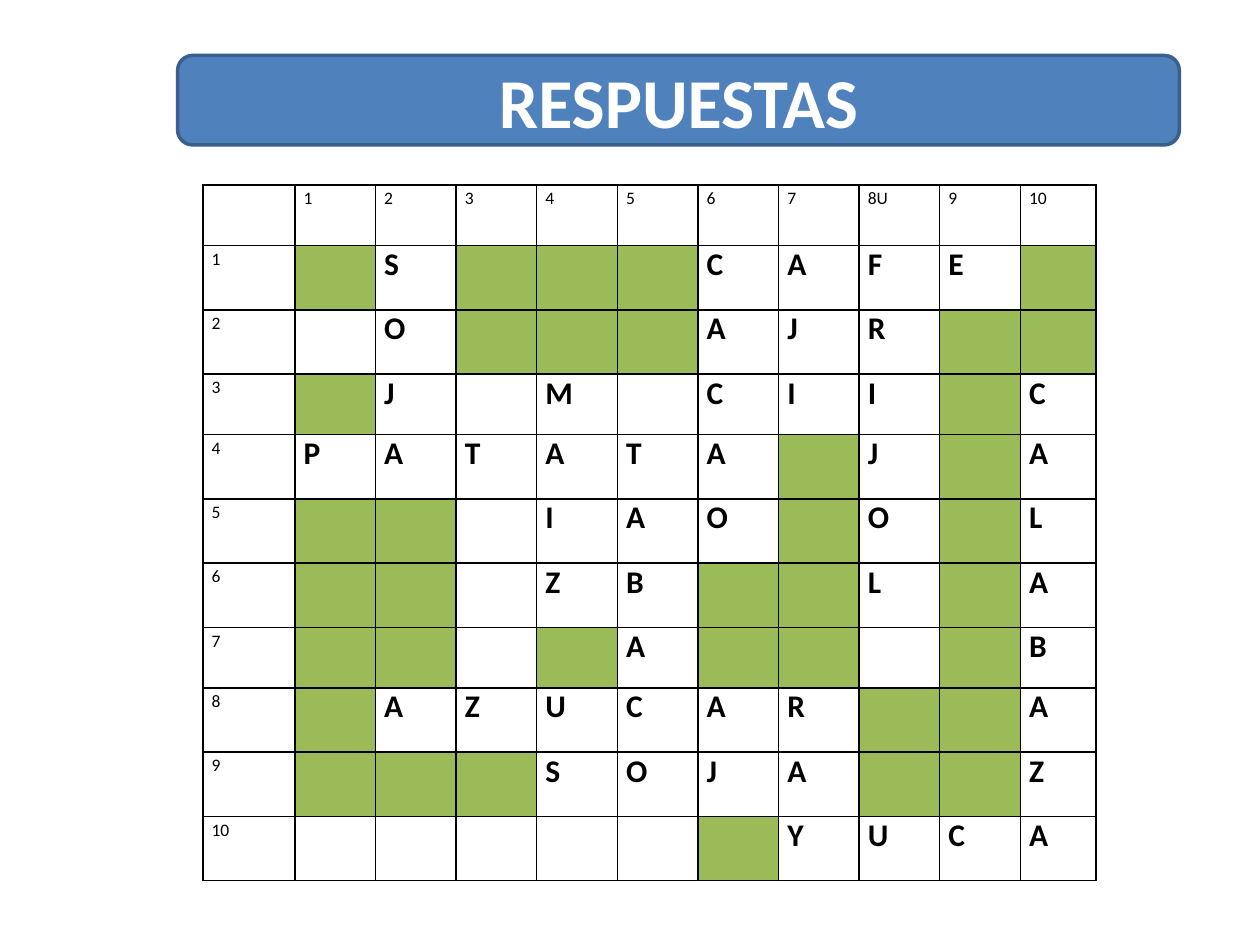
from lxml import etree
from pptx import Presentation
from pptx import util as u
from pptx.dml.color import RGBColor
from pptx.enum import shapes, text
from pptx.oxml import ns

GRID = [
    "#S###CAFE#",
    ".O###AJR##",
    "#J.M.CII#C",
    "PATATA#J#A",
    "##.IAO#O#L",
    "##.ZB##L#A",
    "##.#A##.#B",
    "#AZUCAR##A",
    "###SOJA##Z",
    ".....#YUCA",
]
COLUMN_LABELS = ["", "1", "2", "3", "4", "5", "6", "7", "8U", "9", "10"]
COLUMN_WIDTHS = [0.73] + [0.64] * 9 + [0.6]
SHORT_ROWS = (0, 3, 7)


def color(value):
    return RGBColor.from_string(value)


def write(frame, content, size=18, ink="000000", bold=False, align=None, spacing=None):
    paragraph = frame.paragraphs[0]
    paragraph.alignment = align
    paragraph.line_spacing = spacing
    run = paragraph.add_run()
    run.text = content
    run.font.name = "Calibri"
    run.font.size = u.Pt(size)
    run.font.bold = bold
    run.font.color.rgb = color(ink)


class CrosswordSlide:
    """Draws the banner and the answer grid on one slide in a shared style."""

    green, white, black = "9BBB59", "FFFFFF", "000000"
    blue, dark_blue = "4F81BD", "3A5F8C"

    def __init__(self, slide):
        self.slide = slide

    def banner(self, content, left, top, width, height):
        shape = self.slide.shapes.add_shape(
            shapes.MSO_SHAPE.ROUNDED_RECTANGLE,
            u.Inches(left), u.Inches(top), u.Inches(width), u.Inches(height))
        shape.shadow.inherit = False
        shape.fill.solid()
        shape.fill.fore_color.rgb = color(self.blue)
        shape.line.color.rgb = color(self.dark_blue)
        shape.line.width = u.Pt(2)
        shape.text_frame.vertical_anchor = text.MSO_ANCHOR.MIDDLE
        write(shape.text_frame, content, size=40, ink=self.white, bold=True,
              align=text.PP_ALIGN.CENTER)

    def crossword(self, left, top):
        heights = [0.48 if row in SHORT_ROWS else 0.51 for row in range(len(GRID) + 1)]
        table = self.slide.shapes.add_table(
            len(heights), len(COLUMN_WIDTHS), u.Inches(left), u.Inches(top),
            u.Inches(sum(COLUMN_WIDTHS)), u.Inches(sum(heights))).table
        table.first_row = table.horz_banding = False
        for column, width in zip(table.columns, COLUMN_WIDTHS):
            column.width = u.Inches(width)
        for row, height in zip(table.rows, heights):
            row.height = u.Inches(height)
        for index, label in enumerate(COLUMN_LABELS):
            self.label(table.cell(0, index), label)
        for row, letters in enumerate(GRID, start=1):
            self.label(table.cell(row, 0), str(row))
            for column, letter in enumerate(letters, start=1):
                self.square(table.cell(row, column), letter)

    def label(self, cell, content):
        self.frame(cell, self.white)
        if content:
            write(cell.text_frame, content, size=10, spacing=1.15)

    def square(self, cell, letter):
        self.frame(cell, self.green if letter == "#" else self.white)
        if letter.isalpha():
            write(cell.text_frame, letter, bold=True)

    def frame(self, cell, fill):
        cell.margin_left = cell.margin_right = u.Inches(0.07)
        cell.margin_top = cell.margin_bottom = 0
        properties = cell._tc.get_or_add_tcPr()
        for side in ("a:lnL", "a:lnR", "a:lnT", "a:lnB"):
            border = etree.SubElement(properties, ns.qn(side), w=str(u.Pt(1)))
            solid = etree.SubElement(border, ns.qn("a:solidFill"))
            etree.SubElement(solid, ns.qn("a:srgbClr"), val=self.black)
        cell.fill.solid()
        cell.fill.fore_color.rgb = color(fill)


def main():
    presentation = Presentation()
    presentation.slide_width = u.Inches(10)
    presentation.slide_height = u.Inches(7.5)
    page = CrosswordSlide(presentation.slides.add_slide(presentation.slide_layouts[6]))
    page.crossword(1.61, 1.47)
    page.banner("RESPUESTAS", 1.41, 0.44, 7.95, 0.71)
    presentation.save("out.pptx")


if __name__ == "__main__":
    main()
